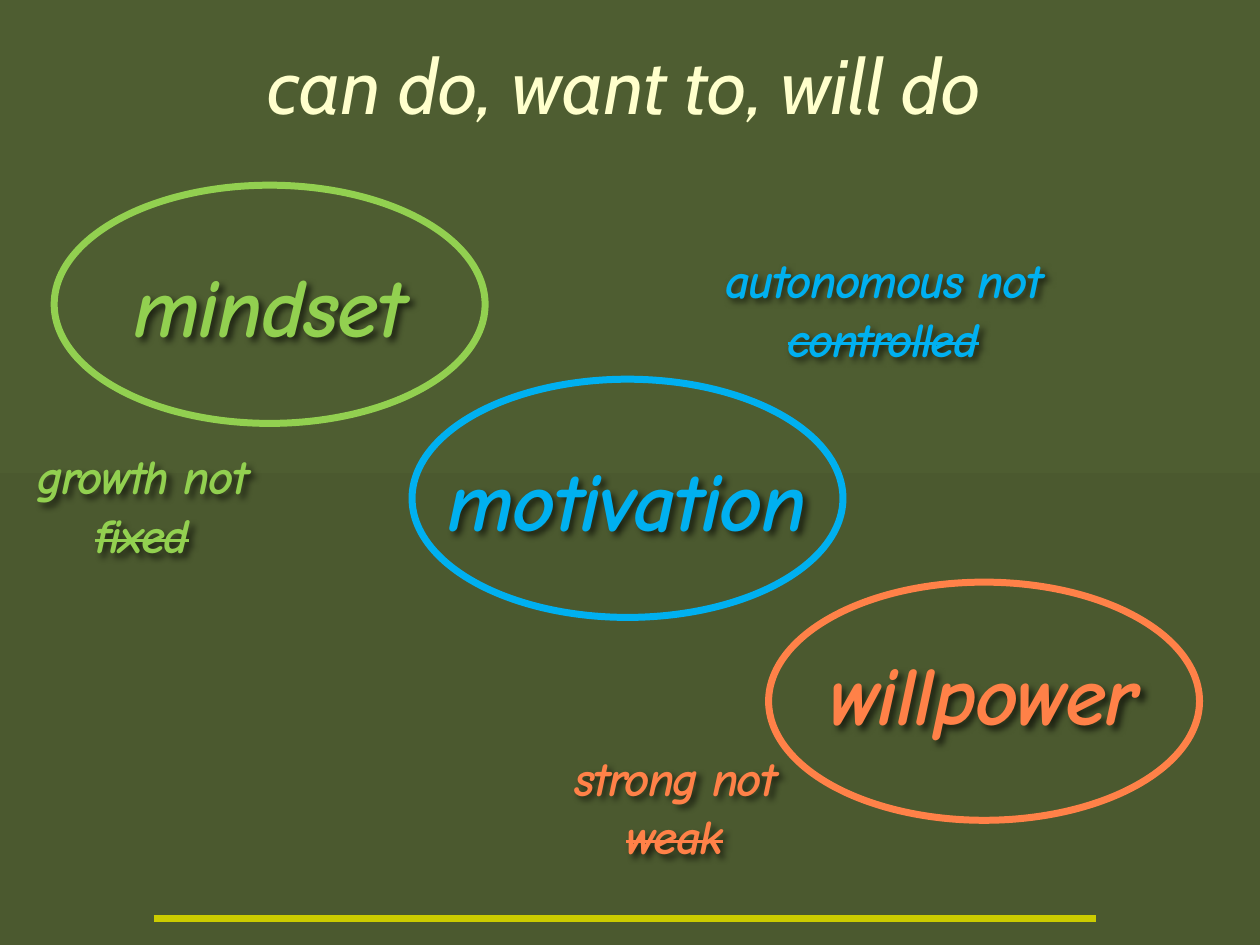
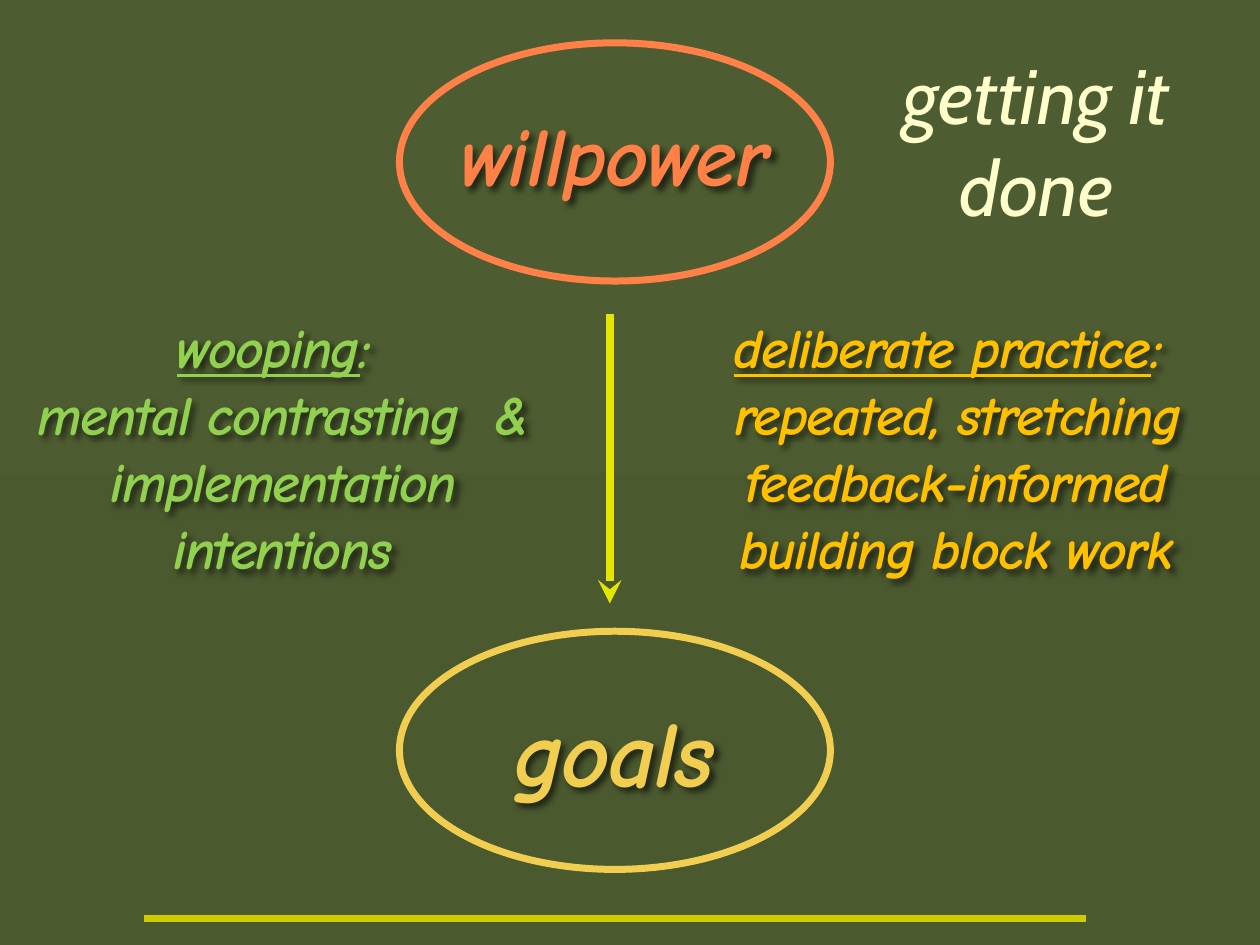
import pptx
import pptx.dml.color
import pptx.enum.shapes
import pptx.enum.text
import pptx.oxml
import pptx.oxml.ns
import pptx.util

# Shared style
W, H = 10, 7.5
TITLE_FONT, BODY_FONT = "Cabin", "Comic Neue"
GREEN, BLUE, CORAL = "92D050", "00B0F0", "FF8148"
GOLD, AMBER, CREAM = "F1CD50", "FFC000", "FFFFCC"
RULE, ARROW = "CCCC00", "E5E600"
BACKGROUND = ("4E5D31", "4B592F")
OVAL_W, OVAL_H = 3.42, 1.89
RULE_W, RULE_Y = 7.48, 7.29
NS = 'xmlns:a="http://schemas.openxmlformats.org/drawingml/2006/main"'
TOP = pptx.enum.text.MSO_ANCHOR.TOP
BOTTOM = pptx.enum.text.MSO_ANCHOR.BOTTOM
inch = pptx.util.Inches

# Content: ovals are (label, colour, oval left, oval top, label width,
# label height, size, anchor); notes are (box, size, colour, paragraphs),
# where a paragraph is a list of (text, emphasis)
SLIDES = [
    {
        "title": ("can do, want to, will do", (0.04, 0.3, 9.84, 0.78)),
        "rule_left": 1.22,
        "ovals": [
            ("mindset", GREEN, 0.43, 1.47, 2.59, 0.91, 48, TOP),
            ("motivation", BLUE, 3.27, 3.01, 3.36, 0.91, 48, TOP),
            ("willpower", CORAL, 6.1, 4.62, 3.41, 0.76, 48, BOTTOM),
        ],
        "notes": [
            ((0.12, 3.49, 2.02, 0.96), 28, GREEN,
             [[("growth not ", None), ("fixed", "strike")]]),
            ((5.63, 1.93, 2.76, 0.96), 28, BLUE,
             [[("autonomous not ", None), ("controlled", "strike")]]),
            ((4.37, 5.88, 1.97, 0.96), 28, CORAL,
             [[("strong not ", None), ("weak", "strike")]]),
        ],
        "arrows": [],
    },
    {
        "title": ("getting it done", (6.73, 0.34, 2.99, 1.55)),
        "rule_left": 1.14,
        "ovals": [
            ("willpower", CORAL, 3.17, 0.34, 3.41, 0.76, 48, BOTTOM),
            ("goals", GOLD, 3.17, 5.01, 1.93, 1.01, 54, TOP),
        ],
        "notes": [
            ((0.12, 2.43, 4.25, 2.26), 32, GREEN,
             [[("wooping", "underline"), (": ", None)],
              [("mental contrasting  & implementation intentions", None)]]),
            ((5.39, 2.43, 4.41, 2.26), 32, AMBER,
             [[("deliberate practice", "underline"), (": ", None)],
              [("repeated, stretching feedback-informed", None)],
              [("building block work", None)]]),
        ],
        "arrows": [(4.84, 2.49, 4.79)],
    },
]


def rgb(value):
    return pptx.dml.color.RGBColor.from_string(value)


def paint_background(s):
    fill = s.background.fill
    fill.gradient()
    fill.gradient_angle = 270
    for stop, position, color in zip(fill.gradient_stops, (0, 1), BACKGROUND):
        stop.position = position
        stop.color.rgb = rgb(color)


def add_line(s, x1, y1, x2, y2, color, width, head=None):
    line = s.shapes.add_connector(
        pptx.enum.shapes.MSO_CONNECTOR.STRAIGHT,
        inch(x1), inch(y1), inch(x2), inch(y2))
    line.line.color.rgb = rgb(color)
    line.line.width = pptx.util.Pt(width)
    spPr = line._element.spPr
    if head:
        spPr.find(pptx.oxml.ns.qn("a:ln")).append(
            pptx.oxml.parse_xml(f'<a:tailEnd {NS} type="{head}"/>'))
    spPr.append(pptx.oxml.parse_xml(f"<a:effectLst {NS}/>"))


def add_text(s, box, paragraphs, size, color, anchor=TOP, wrap=True,
             heading=False):
    sp = s.shapes.add_textbox(*map(inch, box))
    tf = sp.text_frame
    tf.word_wrap = wrap
    tf.vertical_anchor = anchor
    for i, runs in enumerate(paragraphs):
        p = tf.add_paragraph() if i else tf.paragraphs[0]
        p.alignment = pptx.enum.text.PP_ALIGN.CENTER
        for text, emphasis in runs:
            r = p.add_run()
            r.text = text
            r.font.name = TITLE_FONT if heading else BODY_FONT
            r.font.size = pptx.util.Pt(size)
            r.font.color.rgb = rgb(color)
            r.font.italic = True
            r.font.bold = not heading
            r.font.underline = emphasis == "underline"
            rPr = r._r.get_or_add_rPr()
            if not heading:
                rPr.set("spc", "-100")
            if emphasis == "strike":
                rPr.set("strike", "sngStrike")
    if not heading:
        # Soft shadow behind the handwritten text
        sp._element.spPr.append(pptx.oxml.parse_xml(
            f'<a:effectLst {NS}><a:outerShdw blurRad="50800" dist="38100" '
            'dir="2700000"><a:srgbClr val="000000"><a:alpha val="60000"/>'
            '</a:srgbClr></a:outerShdw></a:effectLst>'))


def add_oval(s, label, color, x, y, label_w, label_h, size, anchor):
    sp = s.shapes.add_shape(pptx.enum.shapes.MSO_SHAPE.OVAL,
                            *map(inch, (x, y, OVAL_W, OVAL_H)))
    sp.shadow.inherit = False
    sp.fill.background()
    sp.line.color.rgb = rgb(color)
    sp.line.width = pptx.util.Pt(4)
    box = (x + (OVAL_W - label_w) / 2, y + (OVAL_H - label_h) / 2,
           label_w, label_h)
    # A label wider than its letters need stays centred on the oval
    add_text(s, box, [[(label, None)]], size, color, anchor,
             wrap=anchor == BOTTOM)


def build_slide(prs, content):
    s = prs.slides.add_slide(prs.slide_layouts[6])
    paint_background(s)
    left = content["rule_left"]
    add_line(s, left, RULE_Y, left + RULE_W, RULE_Y, RULE, 3.75)
    title, box = content["title"]
    add_text(s, box, [[(title, None)]], 44, CREAM, BOTTOM, heading=True)
    for oval in content["ovals"]:
        add_oval(s, *oval)
    for box, size, color, paragraphs in content["notes"]:
        add_text(s, box, paragraphs, size, color)
    for x, top, bottom in content["arrows"]:
        add_line(s, x, top, x, bottom, ARROW, 4.5, "stealth")


def main():
    prs = pptx.Presentation()
    prs.slide_width, prs.slide_height = inch(W), inch(H)
    for content in SLIDES:
        build_slide(prs, content)
    prs.save("out.pptx")


if __name__ == "__main__":
    main()
